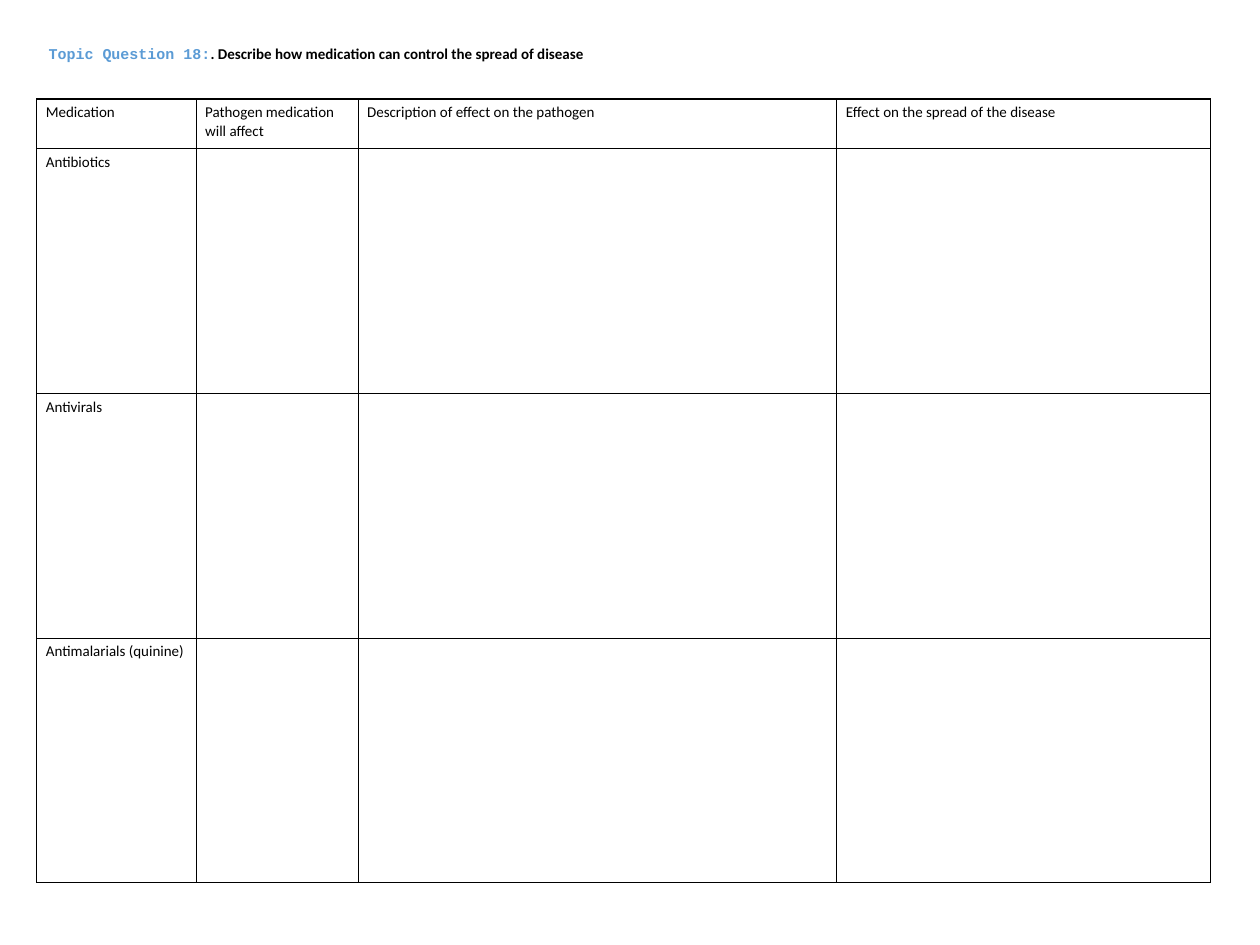
from lxml.etree import SubElement
from pptx import Presentation
from pptx.dml.color import RGBColor
from pptx.enum.text import MSO_ANCHOR
from pptx.oxml.ns import qn
from pptx.util import Inches, Pt

BLACK = RGBColor(0x00, 0x00, 0x00)
BLUE = RGBColor(0x5B, 0x9B, 0xD5)


def add_text(para, text, font="Calibri", size=12, bold=False, color=BLACK, outline=None):
    span = para.add_run()
    span.text = text
    span.font.name = font
    span.font.size = Pt(size)
    span.font.bold = bold
    if outline:
        span.font.fill.background()
        add_line(span.font._element, "a:ln", outline, 0.8)
    else:
        span.font.color.rgb = color


def add_line(parent, tag, color, width):
    line = SubElement(parent, qn(tag), w=str(Pt(width)))
    fill = SubElement(line, qn("a:solidFill"))
    SubElement(fill, qn("a:srgbClr"), val=str(color))
    parent.remove(line)
    position = len(parent) if tag != "a:ln" else 0
    parent.insert(position, line)


deck = Presentation()
deck.slide_width = Inches(14)
deck.slide_height = Inches(10.5)
page = deck.slides.add_slide(deck.slide_layouts[6])

title_box = page.shapes.add_textbox(Inches(0.41), Inches(0.1), Inches(13.17), Inches(1))
title = title_box.text_frame
title.word_wrap = True
title.vertical_anchor = MSO_ANCHOR.MIDDLE
title.margin_left = title.margin_right = Inches(0.13)
title.margin_top = title.margin_bottom = Inches(0.06)
para = title.paragraphs[0]
add_text(para, "Topic Question 18:", font="Courier New", bold=True, outline=BLUE)
add_text(para, ". Describe how medication can control the spread of disease", bold=True)

column_widths = [1.77, 1.8, 5.32, 4.15]
row_heights = [0.55] + [2.72] * 3
rows = [
    ["Medication", "Pathogen medication will affect",
     "Description of effect on the pathogen", "Effect on the spread of the disease"],
    ["Antibiotics", "", "", ""],
    ["Antivirals", "", "", ""],
    ["Antimalarials (quinine)", "", "", ""],
]

table = page.shapes.add_table(
    len(rows), len(column_widths), Inches(0.41), Inches(1.1),
    Inches(sum(column_widths)), Inches(sum(row_heights))).table
table.first_row = False
table.horz_banding = False
for column, width in zip(table.columns, column_widths):
    column.width = Inches(width)
for row, height, texts in zip(table.rows, row_heights, rows):
    row.height = Inches(height)
    for cell, text in zip(row.cells, texts):
        cell_format = cell._tc.get_or_add_tcPr()
        for side in ("a:lnL", "a:lnR", "a:lnT", "a:lnB"):
            add_line(cell_format, side, BLACK, 1)
        cell.fill.background()
        if text:
            add_text(cell.text_frame.paragraphs[0], text)

deck.save("out.pptx")
